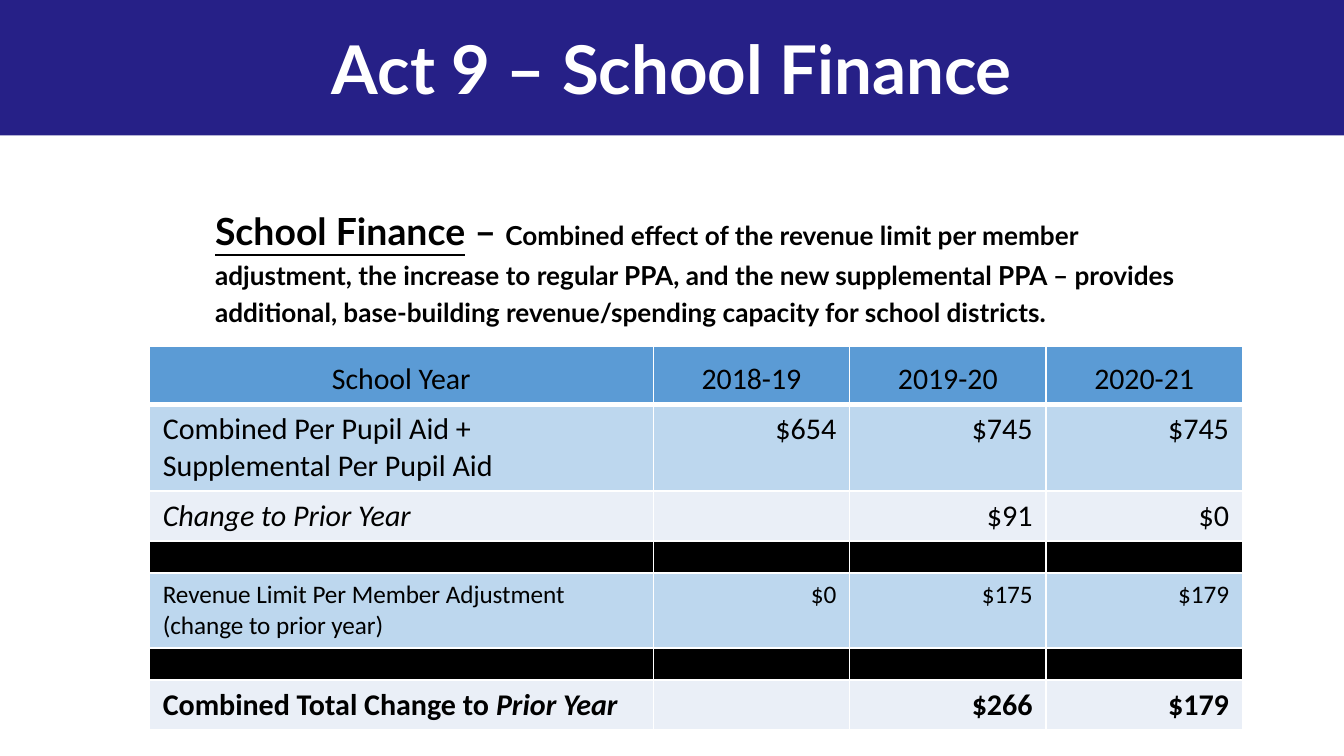
"""Build the Act 9 school finance slide: banner title, summary and per-pupil table."""
from pptx import Presentation
from pptx import util as u
from pptx.dml.color import RGBColor
from pptx.enum import text
from pptx.oxml import parse_xml
from pptx.oxml.ns import nsdecls

THEME = {
    "banner": "262087", "white": "FFFFFF", "black": "000000",
    "header": "5B9BD5", "band": "BDD7EE", "light": "EAEFF7",
    "heading_font": "Lato", "table_font": "Calibri",
    "title": 36, "lead": 20, "body": 14,
    "head": 16, "cell": 16.1, "small": 13.5, "spacer": 8,
}
TITLE = "Act 9 – School Finance"
SUMMARY = [
    ("School Finance", "lead", True),
    (" – ", "lead", False),
    ("Combined effect of the revenue limit per member adjustment, the increase to "
     "regular PPA, and the new supplemental PPA – provides additional, base-building "
     "revenue/spending capacity for school districts.", "body", False),
]
BLANK = [""] * 3
ROWS = [
    {"label": [("School Year", False)], "values": ["2018-19", "2019-20", "2020-21"],
     "fill": "header", "size": "head", "height": 31},
    {"label": [("Combined Per Pupil Aid + Supplemental Per Pupil Aid", False)],
     "values": ["$654", "$745", "$745"], "fill": "band", "size": "cell", "height": 46.5},
    {"label": [("Change to Prior Year", True)], "values": ["", "$91", "$0"],
     "fill": "light", "size": "cell", "height": 26.8},
    {"label": [], "values": BLANK, "fill": "black", "size": "spacer", "height": 17},
    {"label": [("Revenue Limit Per Member Adjustment (change to prior year)", False)],
     "values": ["$0", "$175", "$179"], "fill": "band", "size": "small", "height": 40},
    {"label": [], "values": BLANK, "fill": "black", "size": "spacer", "height": 17},
    {"label": [("Combined Total Change to ", False), ("Prior Year", True)],
     "values": ["", "$266", "$179"], "fill": "light", "size": "cell", "height": 26.8,
     "bold": True},
]
COLUMNS = [270] + [105.2] * 3


def rgb(name):
    return RGBColor.from_string(THEME[name])


def place(sp, left, top, width, height):
    sp.left, sp.top, sp.width, sp.height = map(u.Pt, (left, top, width, height))


def style(font, face, size, color, bold):
    font.name, font.size, font.bold = THEME[face], u.Pt(THEME[size]), bold
    font.color.rgb = rgb(color)


def add_borders(cell, bottom):
    tc_pr = cell._tc.get_or_add_tcPr()
    for side, width in zip("LRTB", (1, 1, 1, bottom)):
        tc_pr.append(parse_xml(
            f'<a:ln{side} {nsdecls("a")} w="{u.Pt(width)}"><a:solidFill>'
            f'<a:srgbClr val="{THEME["white"]}"/></a:solidFill></a:ln{side}>'))


def fill_cell(cell, runs, row, align, is_header):
    add_borders(cell, 3 if is_header else 1)
    cell.fill.solid()
    cell.fill.fore_color.rgb = rgb(row["fill"])
    cell.vertical_anchor = text.MSO_ANCHOR.BOTTOM if is_header else text.MSO_ANCHOR.TOP
    p = cell.text_frame.paragraphs[0]
    p.alignment = align
    style(p.font, "table_font", row["size"], "black", row.get("bold", False))
    for words, italic in runs:
        r = p.add_run()
        r.text, r.font.italic = words, italic
    if not runs:
        size = int(THEME[row["size"]] * 100)
        p._p.append(parse_xml(f'<a:endParaRPr {nsdecls("a")} sz="{size}"/>'))


def add_title(s):
    sp = s.shapes.title
    place(sp, 0, 0, 720, 72.5)
    sp.fill.solid()
    sp.fill.fore_color.rgb = rgb("banner")
    tf = sp.text_frame
    tf.text, tf.vertical_anchor = TITLE, text.MSO_ANCHOR.MIDDLE
    tf.auto_size = text.MSO_AUTO_SIZE.NONE
    p = tf.paragraphs[0]
    p.alignment = text.PP_ALIGN.CENTER
    style(p.font, "heading_font", "title", "white", True)


def add_summary(s):
    sp = s.placeholders[1]
    place(sp, 108, 103, 529, 302)
    tf = sp.text_frame
    tf.auto_size = text.MSO_AUTO_SIZE.NONE
    p = tf.paragraphs[0]
    p.line_spacing, p.space_before, p.space_after = 1.2, u.Pt(0), u.Pt(12)
    p_pr = p._p.get_or_add_pPr()
    p_pr.set("marL", "0")
    p_pr.set("indent", "0")
    p_pr.append(parse_xml(f'<a:buNone {nsdecls("a")}/>'))
    for words, size, underline in SUMMARY:
        r = p.add_run()
        r.text, r.font.underline = words, underline
        style(r.font, "heading_font", size, "black", True)


def add_finance_table(s):
    heights = [row["height"] for row in ROWS]
    frame = s.shapes.add_table(len(ROWS), len(COLUMNS), u.Pt(80), u.Pt(185.5),
                               u.Pt(sum(COLUMNS)), u.Pt(sum(heights)))
    table = frame.table
    table.first_row = table.horz_banding = False
    for column, width in zip(table.columns, COLUMNS):
        column.width = u.Pt(width)
    for i, row in enumerate(ROWS):
        table.rows[i].height = u.Pt(row["height"])
        is_header = i == 0
        cells = [row["label"]] + [[(v, False)] if v else [] for v in row["values"]]
        for j, runs in enumerate(cells):
            align = (text.PP_ALIGN.CENTER if is_header
                     else text.PP_ALIGN.RIGHT if j else text.PP_ALIGN.LEFT)
            fill_cell(table.cell(i, j), runs, row, align, is_header)


def main():
    prs = Presentation()
    prs.slide_width, prs.slide_height = u.Pt(720), u.Pt(405)
    s = prs.slides.add_slide(prs.slide_layouts[1])
    add_title(s)
    add_summary(s)
    add_finance_table(s)
    prs.save("out.pptx")


if __name__ == "__main__":
    main()
